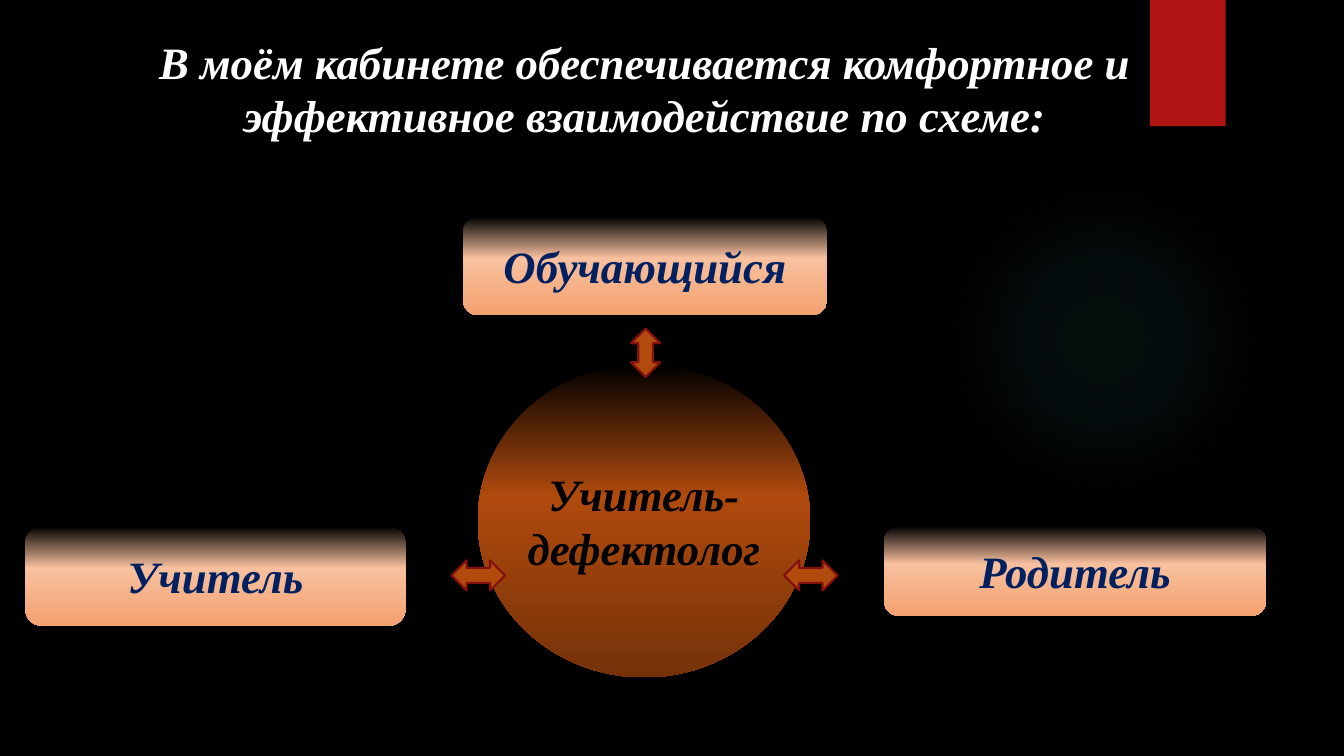
from pptx import Presentation
from pptx.dml.color import RGBColor
from pptx.enum.shapes import MSO_SHAPE
from pptx.enum.text import MSO_ANCHOR, MSO_AUTO_SIZE, PP_ALIGN
from pptx.oxml import parse_xml
from pptx.oxml.ns import nsdecls, qn
from pptx.util import Cm, Pt

BLACK = RGBColor(0x00, 0x00, 0x00)
WHITE = RGBColor(0xFF, 0xFF, 0xFF)
NAVY = RGBColor(0x00, 0x20, 0x60)
RED = RGBColor(0xB0, 0x15, 0x13)
DARK_RED = RGBColor(0x82, 0x10, 0x0E)
RUST = RGBColor(0xB0, 0x4A, 0x0D)
BROWN = RGBColor(0x75, 0x32, 0x09)
PEACH = RGBColor(0xF8, 0xC0, 0x9F)
ORANGE = RGBColor(0xF4, 0xA1, 0x6F)
TEAL = RGBColor(0x50, 0xB9, 0xC1)

# Boxes are left, top, width, height in cm; stops are percent, colour, opacity.
TITLE = "В моём кабинете обеспечивается комфортное и эффективное взаимодействие по схеме:"
TITLE_BOX = (3.18, 0.74, 26.14, 3.89)
PUPIL = ("Обучающийся", (11.66, 5.46, 9.19, 2.49))
HUB = ("Учитель-\vдефектолог", (12.04, 9.17, 8.38, 7.9))
SIDES = [
    ("Учитель", (0.64, 13.26, 9.58, 2.51)),
    ("Родитель", (22.28, 13.26, 9.63, 2.26)),
]
ARROWS = [
    (MSO_SHAPE.UP_DOWN_ARROW, (15.9, 8.28, 0.74, 1.22)),
    (MSO_SHAPE.LEFT_RIGHT_ARROW, (11.38, 14.12, 1.35, 0.76)),
    (MSO_SHAPE.LEFT_RIGHT_ARROW, (19.76, 14.12, 1.35, 0.76)),
]
GLOW_BOX = (23.9, 4.65, 7.82, 7.82)
TAB_BOX = (28.98, 0, 1.91, 3.18)
CARD_FADE = [(0, BLACK, 100), (42, PEACH, 100), (100, ORANGE, 100)]
HUB_FADE = [(0, BLACK, 100), (42, RUST, 100), (100, BROWN, 100)]
GLOW_FADE = [(0, TEAL, 7), (36, TEAL, 6), (69, TEAL, 0)]
LINEAR = '<a:lin ang="5400000" scaled="0"/>'
RADIAL = ('<a:path path="circle"><a:fillToRect l="50000" t="50000" '
          'r="50000" b="50000"/></a:path>')


def fade(shape, stops, course=LINEAR):
    """Fill the shape with a gradient of several stops."""
    marks = "".join(
        f'<a:gs pos="{pos * 1000}"><a:srgbClr val="{color}">'
        f'<a:alpha val="{alpha * 1000}"/></a:srgbClr></a:gs>'
        for pos, color, alpha in stops)
    grad = parse_xml(f'<a:gradFill {nsdecls("a")} rotWithShape="1">'
                     f'<a:gsLst>{marks}</a:gsLst>{course}</a:gradFill>')
    shape.fill.background()
    props = shape.element.spPr
    props.replace(props.find(qn("a:noFill")), grad)


def place(shape, box):
    shape.left, shape.top, shape.width, shape.height = map(Cm, box)


def draw(kind, box, color=None):
    shape = slide.shapes.add_shape(kind, *map(Cm, box))
    shape.shadow.inherit = False
    shape.line.fill.background()
    if color is not None:
        shape.fill.solid()
        shape.fill.fore_color.rgb = color
    return shape


def write(shape, text, color=NAVY, size=32, anchor=MSO_ANCHOR.MIDDLE, inset=None):
    frame = shape.text_frame
    frame.word_wrap = True
    frame.auto_size = MSO_AUTO_SIZE.NONE
    frame.vertical_anchor = anchor
    if inset is not None:
        frame.margin_left = frame.margin_right = Cm(inset)
        frame.margin_top = frame.margin_bottom = Cm(inset)
    frame.text = text
    para = frame.paragraphs[0]
    para.alignment = PP_ALIGN.CENTER
    para.space_before = Pt(0)
    for run in para.runs:
        font = run.font
        font.name, font.size = "Times New Roman", Pt(size)
        font.bold = font.italic = True
        font.color.rgb = color


deck = Presentation()
deck.slide_width, deck.slide_height = Cm(33.87), Cm(19.05)
slide = deck.slides.add_slide(deck.slide_layouts[1])
slide.background.fill.solid()
slide.background.fill.fore_color.rgb = BLACK

fade(draw(MSO_SHAPE.OVAL, GLOW_BOX), GLOW_FADE, RADIAL)
draw(MSO_SHAPE.RECTANGLE, TAB_BOX, RED)

title = slide.shapes.title
place(title, TITLE_BOX)
write(title, TITLE, color=WHITE, anchor=MSO_ANCHOR.TOP)

name, box = PUPIL
pupil = slide.placeholders[1]
place(pupil, box)
fade(pupil, CARD_FADE)
pupil.element.spPr.insert(1, parse_xml(
    f'<a:prstGeom {nsdecls("a")} prst="roundRect"><a:avLst/></a:prstGeom>'))
write(pupil, name)
layout = pupil.text_frame.paragraphs[0]._p.get_or_add_pPr()
layout.set("marL", "0")
layout.set("indent", "0")
layout.append(parse_xml(f'<a:buNone {nsdecls("a")}/>'))

name, box = HUB
hub = draw(MSO_SHAPE.OVAL, box)
fade(hub, HUB_FADE)
write(hub, name, color=BLACK, inset=0)

for name, box in SIDES:
    card = draw(MSO_SHAPE.ROUNDED_RECTANGLE, box)
    fade(card, CARD_FADE)
    write(card, name)

for kind, box in ARROWS:
    arrow = draw(kind, box, RUST)
    arrow.line.color.rgb = DARK_RED
    arrow.line.width = Pt(1.5)

deck.save("out.pptx")
